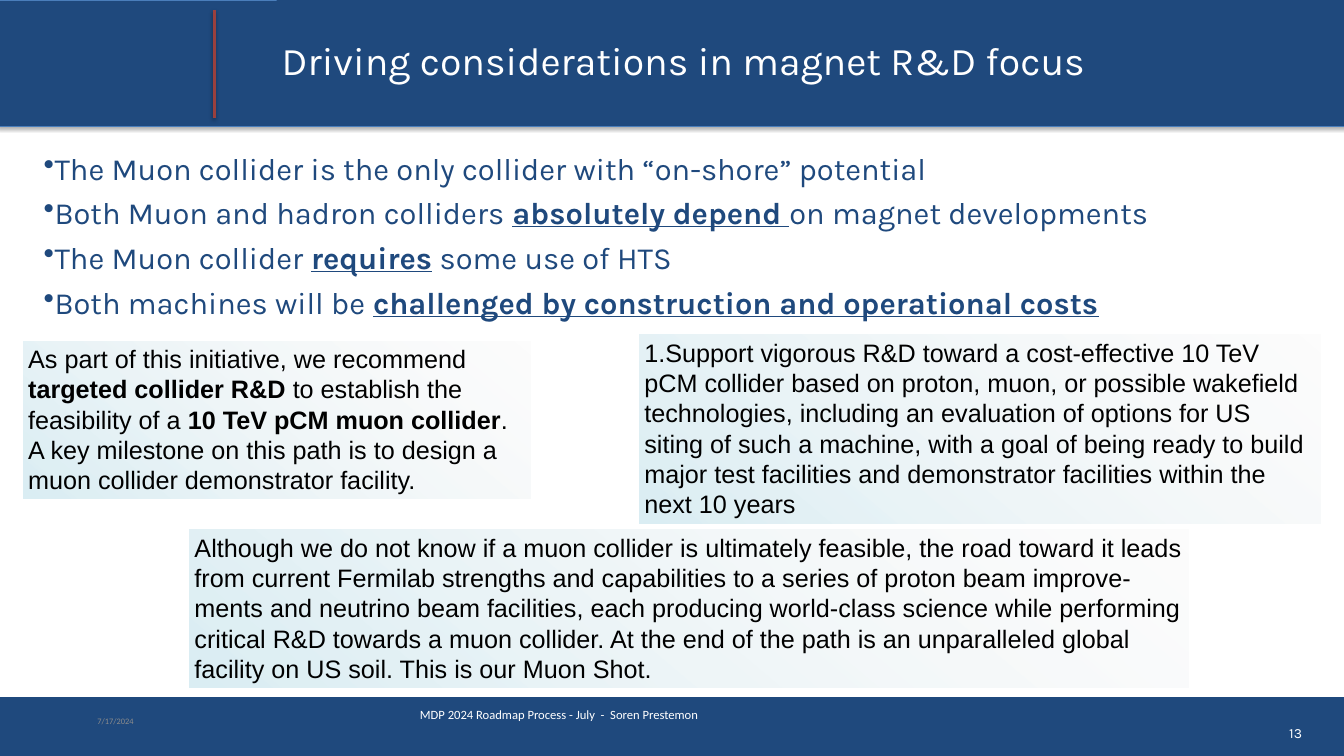
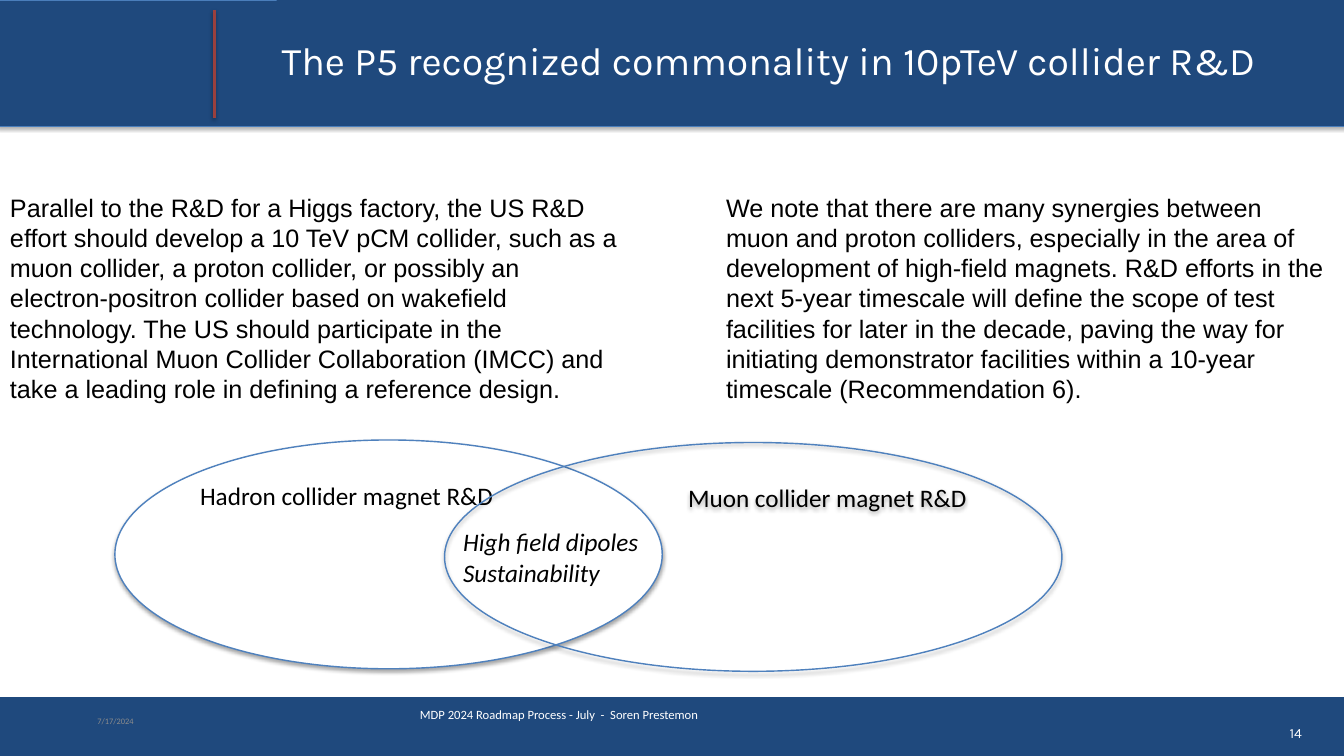
from dataclasses import dataclass

from lxml.etree import SubElement
from pptx import Presentation
from pptx.dml.color import RGBColor
from pptx.enum.shapes import MSO_CONNECTOR, MSO_SHAPE
from pptx.enum.text import MSO_ANCHOR, MSO_AUTO_SIZE, PP_ALIGN
from pptx.oxml.ns import qn
from pptx.util import Emu, Inches, Pt


@dataclass(frozen=True)
class Theme:
    navy: str = "1F497D"
    band_edge: str = "4A7EBB"
    rule: str = "9A403E"
    oval_edge: str = "4F81BD"
    white: str = "FFFFFF"
    black: str = "000000"
    gray: str = "8C8C8C"
    quote_light: str = "F7F7F7"
    quote_blue: str = "DBEEF4"
    heading: str = "Karla"
    quote: str = "Arial"
    label: str = "Calibri"
    title_size: int = 56
    bullet_size: int = 44
    text_size: int = 36
    page_size: int = 20
    footer_size: int = 18
    date_size: int = 12


def rgb(value):
    return RGBColor.from_string(value)


def add_marker(p, marker, indent):
    pPr = p._p.get_or_add_pPr()
    pPr.set("marL", str(Inches(indent)))
    pPr.set("indent", str(-Inches(indent)))
    if marker == "1.":
        SubElement(pPr, qn("a:buAutoNum"), type="arabicPeriod")
    else:
        SubElement(pPr, qn("a:buChar"), char=marker)


def write(tf, paragraphs, font, size, color, align=PP_ALIGN.LEFT, anchor=MSO_ANCHOR.TOP,
          inset=(0.1, 0.05, 0.1, 0.05), wrap=True, italic=False, underline=False,
          marker=None, indent=0, space=0):
    tf.word_wrap = wrap
    tf.auto_size = MSO_AUTO_SIZE.NONE
    tf.vertical_anchor = anchor
    tf.margin_left, tf.margin_top, tf.margin_right, tf.margin_bottom = map(Inches, inset)
    for i, text in enumerate(paragraphs):
        p = tf.add_paragraph() if i else tf.paragraphs[0]
        p.alignment = align
        if i and space:
            p.space_before = Pt(space)
        if marker:
            add_marker(p, marker, indent)
        for j, part in enumerate(text.split("|")):
            if not part:
                continue
            r = p.add_run()
            r.text = part
            r.font.name = font
            r.font.size = Pt(size)
            r.font.color.rgb = rgb(color)
            r.font.italic = italic
            r.font.bold = j % 2 == 1
            r.font.underline = underline and j % 2 == 1


def add_shadow(sp, opacity):
    spPr = sp._element.spPr
    for old in spPr.findall(qn("a:effectLst")):
        spPr.remove(old)
    effects = SubElement(spPr, qn("a:effectLst"))
    outer = SubElement(effects, qn("a:outerShdw"), blurRad=str(Pt(6)), dist=str(Pt(3)),
                       dir="5400000", rotWithShape="0")
    clr = SubElement(outer, qn("a:srgbClr"), val="000000")
    SubElement(clr, qn("a:alpha"), val=str(opacity * 1000))


class Deck:
    COLUMNS = 80
    ROWS = 45
    EVEN = (0.1, 0.1, 0.1, 0.1)

    def __init__(self, theme):
        self.theme = theme
        self.prs = Presentation()
        self.prs.slide_width = Inches(26.67)
        self.prs.slide_height = Inches(15)
        self.s = None

    def x(self, columns):
        return Emu(round(self.prs.slide_width * columns / self.COLUMNS))

    def y(self, rows):
        return Emu(round(self.prs.slide_height * rows / self.ROWS))

    def box(self, left, top, width, height):
        return self.x(left), self.y(top), self.x(width), self.y(height)

    def slide(self, title, number):
        t = self.theme
        self.s = self.prs.slides.add_slide(self.prs.slide_layouts[5])
        self.shape((-0.1, 41.5, 80.2, 3.5), fill=t.navy)
        self.shape((-0.2, 0, 80.4, 7.5), fill=t.navy, edge=t.band_edge, width=1, shadow=35)
        self.rule((12.75, 7), (12.75, 0.6))
        self.title(title)
        self.text((5.5, 41.7, 18, 2.4), ["7/17/2024"], font=t.label, size=t.date_size,
                  color=t.gray, anchor=MSO_ANCHOR.MIDDLE)
        self.text((24.7, 41.7, 46.08, 2.4),
                  ["MDP 2024 Roadmap Process - July  -  Soren Prestemon"],
                  font=t.label, size=t.footer_size, color=t.white,
                  anchor=MSO_ANCHOR.MIDDLE, inset=(0.1, 0.05, 0.1, 0.3))
        self.text((76.2, 42.84, 1.6, 1.53), [str(number)], font=t.heading, size=t.page_size,
                  color=t.white, align=PP_ALIGN.RIGHT, anchor=MSO_ANCHOR.MIDDLE,
                  inset=self.EVEN, wrap=False)

    def title(self, text):
        t = self.theme
        sp = self.s.shapes.title
        sp.left, sp.top, sp.width, sp.height = self.box(16.47, -0.09, 63.63, 7.26)
        sp.fill.solid()
        sp.fill.fore_color.rgb = rgb(t.navy)
        write(sp.text_frame, [text], t.heading, t.title_size, t.white,
              anchor=MSO_ANCHOR.MIDDLE, inset=self.EVEN)
        self.s.shapes._spTree.append(sp._element)

    def shape(self, place, kind=MSO_SHAPE.RECTANGLE, fill=None, edge=None, width=1, shadow=0):
        sp = self.s.shapes.add_shape(kind, *self.box(*place))
        sp.shadow.inherit = False
        if fill:
            sp.fill.solid()
            sp.fill.fore_color.rgb = rgb(fill)
        else:
            sp.fill.background()
        if edge:
            sp.line.color.rgb = rgb(edge)
            sp.line.width = Pt(width)
        else:
            sp.line.fill.background()
        if shadow:
            add_shadow(sp, shadow)
        return sp

    def rule(self, start, end):
        sp = self.s.shapes.add_connector(MSO_CONNECTOR.STRAIGHT, self.x(start[0]),
                                         self.y(start[1]), self.x(end[0]), self.y(end[1]))
        sp.line.color.rgb = rgb(self.theme.rule)
        sp.line.width = Pt(4)
        add_shadow(sp, 38)

    def text(self, place, paragraphs, **style):
        t = self.theme
        style = dict(font=t.quote, size=t.text_size, color=t.black) | style
        sp = self.s.shapes.add_textbox(*self.box(*place))
        write(sp.text_frame, paragraphs, **style)

    def bullets(self, place, paragraphs):
        t = self.theme
        self.text(place, paragraphs, font=t.heading, size=t.bullet_size, color=t.navy,
                  inset=self.EVEN, underline=True, marker="•", indent=0.11, space=11)

    def quote(self, place, text, marker=None):
        t = self.theme
        sp = self.shape(place)
        sp.fill.gradient()
        sp.fill.gradient_angle = 230
        for stop, color in zip(sp.fill.gradient_stops, (t.quote_light, t.quote_blue)):
            stop.color.rgb = rgb(color)
        light = next(sp._element.spPr.iter(qn("a:srgbClr")))
        SubElement(light, qn("a:alpha"), val="32000")
        write(sp.text_frame, [text], t.quote, t.text_size, t.black, marker=marker)

    def oval(self, place, label, fill=None, align=PP_ALIGN.LEFT):
        t = self.theme
        sp = self.shape(place, MSO_SHAPE.OVAL, fill, t.oval_edge, 2, 35)
        write(sp.text_frame, [label], t.label, t.text_size, t.black, align=align,
              inset=(0.1, 0.13, 0.1, 0.1))


def driving_considerations(deck):
    deck.slide("Driving considerations in magnet R&D focus", 13)
    deck.bullets((2.3, 8.6, 73.07, 29.7), [
        "The Muon collider is the only collider with “on-shore” potential",
        "Both Muon and hadron colliders |absolutely depend |on magnet developments",
        "The Muon collider |requires| some use of HTS",
        "Both machines will be |challenged by construction and operational costs",
    ])
    deck.quote((1.38, 20.3, 30.2, 9.4),
               "As part of this initiative, we recommend |targeted collider R&D |to establish "
               "the feasibility of a |10 TeV pCM muon collider|. A key milestone on this path "
               "is to design a muon collider demonstrator facility.")
    deck.quote((38.06, 19.92, 40.55, 11.22),
               "Support vigorous R&D toward a cost-effective 10 TeV pCM collider based on "
               "proton, muon, or possible wakefield technologies, including an evaluation of "
               "options for US siting of such a machine, with a goal of being ready to build "
               "major test facilities and demonstrator facilities within the next 10 years",
               marker="1.")
    deck.quote((11.28, 31.53, 59.45, 9.4),
               "Although we do not know if a muon collider is ultimately feasible, the road "
               "toward it leads from current Fermilab strengths and capabilities to a series "
               "of proton beam improve- ments and neutrino beam facilities, each producing "
               "world-class science while performing critical R&D towards a muon collider. At "
               "the end of the path is an unparalleled global facility on US soil. This is our "
               "Muon Shot.")


def recognized_commonality(deck):
    t = deck.theme
    deck.slide("The P5 recognized commonality in 10pTeV collider R&D", 14)
    deck.text((42.92, 11.28, 36.45, 13.1), [
        "We note that there are many synergies between muon and proton colliders, especially "
        "in the area of development of high-field magnets. R&D efforts in the next 5-year "
        "timescale will define the scope of test facilities for later in the decade, paving "
        "the way for initiating demonstrator facilities within a 10-year timescale "
        "(Recommendation 6)."])
    deck.text((0.3, 11.28, 36.75, 13.1), [
        "Parallel to the R&D for a Higgs factory, the US R&D effort should develop a 10 TeV "
        "pCM collider, such as a muon collider, a proton collider, or possibly an "
        "electron-positron collider based on wakefield technology. The US should participate "
        "in the International Muon Collider Collaboration (IMCC) and take a leading role in "
        "defining a reference design."])
    deck.oval((6.84, 26.19, 32.58, 13.62), "Hadron collider magnet R&D", fill=t.white)
    deck.oval((26.46, 26.34, 36.75, 13.62), "Muon collider magnet R&D", align=PP_ALIGN.RIGHT)
    deck.text((27.27, 31.05, 11.49, 4.23), ["High field dipoles", "Sustainability"],
              font=t.label, italic=True, inset=deck.EVEN)


def main():
    deck = Deck(Theme())
    driving_considerations(deck)
    recognized_commonality(deck)
    deck.prs.save("out.pptx")


if __name__ == "__main__":
    main()
